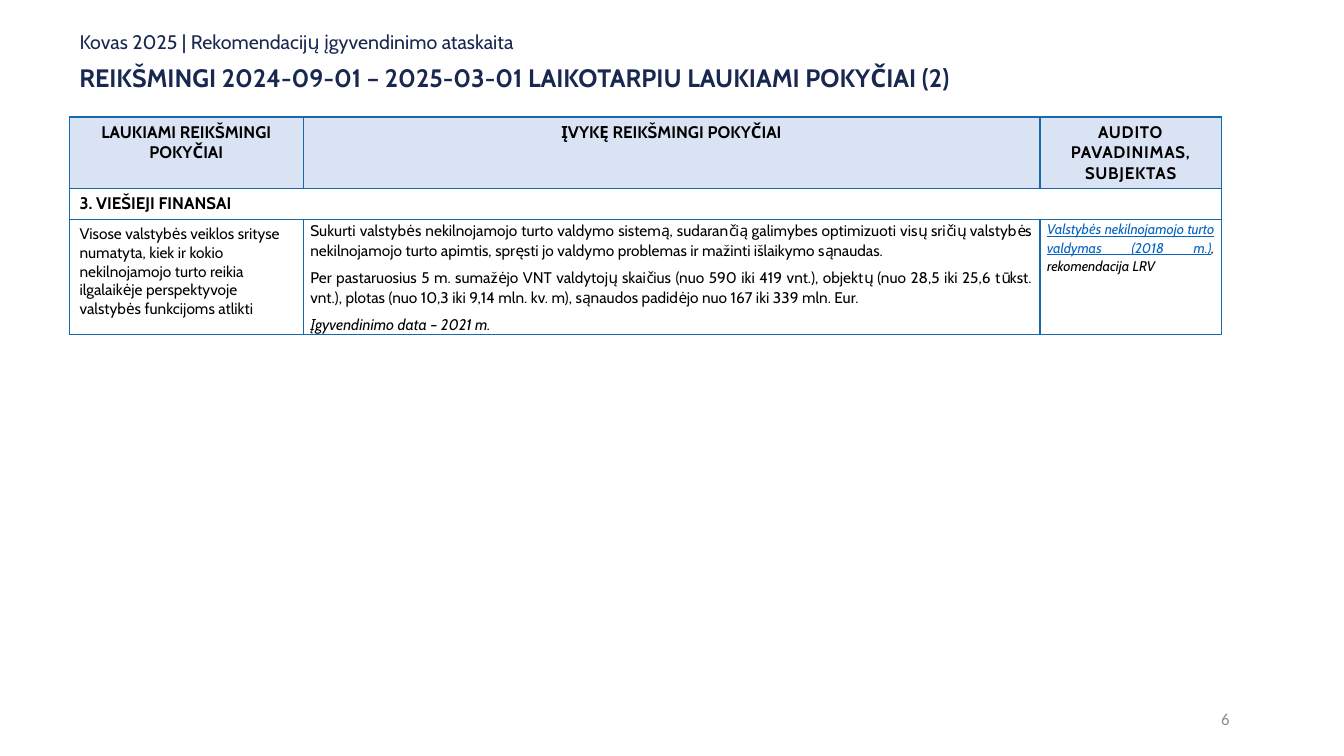
from dataclasses import dataclass, field
from typing import Any, Optional

from lxml.etree import SubElement
from pptx import Presentation
from pptx.dml.color import RGBColor
from pptx.enum.text import MSO_ANCHOR, PP_ALIGN
from pptx.oxml.ns import qn
from pptx.table import _Cell
from pptx.text.text import TextFrame
from pptx.util import Cm, Pt


@dataclass(frozen=True)
class Theme:
    font: str = "Cabin"
    number_font: str = "Calibri"
    navy: str = "192850"
    black: str = "000000"
    grey: str = "8C8C8C"
    link: str = "0563C1"
    border: str = "166AAB"
    header_fill: str = "DAE3F3"
    heading_size: float = 18
    title_size: float = 14
    header_size: float = 12
    body_size: float = 11
    source_size: float = 10
    border_width: float = 1


THEME = Theme()


@dataclass(frozen=True)
class Span:
    text: str
    size: float = THEME.body_size
    color: str = THEME.black
    font: str = THEME.font
    format: dict[str, Any] = field(default_factory=dict)
    tracking: float = 0


@dataclass(frozen=True)
class Para:
    spans: list[Span]
    format: dict[str, Any] = field(default_factory=dict)


@dataclass(frozen=True)
class CellText:
    paras: list[Para]
    fill: Optional[str] = None
    tight: bool = False


BOLD = {"bold": True}
ITALIC = {"italic": True}
CENTERED = {"alignment": PP_ALIGN.CENTER}
JUSTIFIED = {"alignment": PP_ALIGN.JUSTIFY, "line_spacing": 1.1, "space_after": Pt(2)}
JUSTIFIED_NEXT = JUSTIFIED | {"space_before": Pt(2)}


def set_attributes(target: Any, values: dict[str, Any]) -> None:
    for name, value in values.items():
        setattr(target, name, value)


def write(frame: TextFrame, paras: list[Para]) -> None:
    frame.word_wrap = True
    for index, para in enumerate(paras):
        paragraph = frame.add_paragraph() if index else frame.paragraphs[0]
        set_attributes(paragraph, para.format)
        for span in para.spans:
            run = paragraph.add_run()
            run.text = span.text
            base = {"name": span.font, "size": Pt(span.size), "bold": False}
            set_attributes(run.font, base | span.format)
            run.font.color.rgb = RGBColor.from_string(span.color)
            if span.tracking:
                run._r.get_or_add_rPr().set("spc", str(round(span.tracking * 100)))


def draw_borders(cell: _Cell) -> None:
    properties = cell._tc.get_or_add_tcPr()
    for side in ("lnL", "lnR", "lnT", "lnB"):
        line = SubElement(properties, qn(f"a:{side}"), w=str(Pt(THEME.border_width)))
        fill = SubElement(line, qn("a:solidFill"))
        SubElement(fill, qn("a:srgbClr"), val=THEME.border)


def fill_cell(cell: _Cell, content: Optional[CellText]) -> None:
    draw_borders(cell)
    if content and content.fill:
        cell.fill.solid()
        cell.fill.fore_color.rgb = RGBColor.from_string(content.fill)
    else:
        cell.fill.background()
    if content is None:
        return
    if content.tight:
        set_attributes(cell, {"margin_left": Cm(0.18), "margin_right": Cm(0.18),
                              "margin_top": 0, "margin_bottom": 0})
    write(cell.text_frame, content.paras)


def header(text: str, tracking: float = 0) -> CellText:
    span = Span(text, THEME.header_size, format=BOLD, tracking=tracking)
    return CellText([Para([span], CENTERED)], THEME.header_fill)


COLUMN_WIDTHS = (5.89, 18.57, 4.57)
ROW_HEIGHTS = (1.8, 0.78, 2.9)

ROWS: list[list[Optional[CellText]]] = [
    [
        header("LAUKIAMI REIKŠMINGI POKYČIAI"),
        header("ĮVYKĘ REIKŠMINGI POKYČIAI"),
        header("AUDITO PAVADINIMAS, SUBJEKTAS", tracking=0.5),
    ],
    [
        CellText([Para([Span("3. VIEŠIEJI FINANSAI", THEME.header_size, format=BOLD)])]),
        None,
        None,
    ],
    [
        CellText([Para([Span(
            "Visose valstybės veiklos srityse numatyta, kiek ir kokio nekilnojamojo turto "
            "reikia ilgalaikėje perspektyvoje valstybės funkcijoms atlikti")])]),
        CellText([
            Para([Span(
                "Sukurti valstybės nekilnojamojo turto valdymo sistemą, sudarančią galimybes "
                "optimizuoti visų sričių valstybės nekilnojamojo turto apimtis, spręsti jo "
                "valdymo problemas ir mažinti išlaikymo sąnaudas.")], JUSTIFIED),
            Para([Span(
                "Per pastaruosius 5 m. sumažėjo VNT valdytojų skaičius (nuo 590 iki 419 vnt.), "
                "objektų (nuo 28,5 iki 25,6 tūkst. vnt.), plotas (nuo 10,3 iki 9,14 mln. kv. m), "
                "sąnaudos padidėjo nuo 167 iki 339 mln. Eur.")], JUSTIFIED_NEXT),
            Para([Span("Įgyvendinimo data – 2021 m.", format=ITALIC)], JUSTIFIED_NEXT),
        ], tight=True),
        CellText([Para([
            Span("Valstybės nekilnojamojo turto valdymas (2018 m.)", THEME.source_size,
                 THEME.link, format=ITALIC | {"underline": True}),
            Span(", rekomendacija LRV", THEME.source_size, format=ITALIC),
        ], JUSTIFIED)], tight=True),
    ],
]


def add_changes_table(slide: Any) -> None:
    table = slide.shapes.add_table(
        len(ROW_HEIGHTS), len(COLUMN_WIDTHS), Cm(1.75), Cm(2.95),
        Cm(sum(COLUMN_WIDTHS)), Cm(sum(ROW_HEIGHTS))).table
    set_attributes(table, {"first_row": False, "horz_banding": False})
    for column, width in zip(table.columns, COLUMN_WIDTHS):
        column.width = Cm(width)
    for row, height, contents in zip(table.rows, ROW_HEIGHTS, ROWS):
        row.height = Cm(height)
        for cell, content in zip(row.cells, contents):
            fill_cell(cell, content)
    table.cell(1, 0).merge(table.cell(1, len(COLUMN_WIDTHS) - 1))


def main() -> None:
    presentation = Presentation()
    set_attributes(presentation, {"slide_width": Cm(33.87), "slide_height": Cm(19.05)})
    slide = presentation.slides.add_slide(presentation.slide_layouts[5])

    title = slide.shapes.title
    set_attributes(title, {"left": Cm(1.75), "top": Cm(0.69),
                           "width": Cm(29.21), "height": Cm(1.24)})
    title.text_frame.vertical_anchor = MSO_ANCHOR.TOP
    write(title.text_frame, [Para(
        [Span("Kovas 2025 | Rekomendacijų įgyvendinimo ataskaita",
              THEME.title_size, THEME.navy)],
        {"alignment": PP_ALIGN.LEFT, "line_spacing": 0.9})])

    page_number = slide.shapes.add_textbox(Cm(23.95), Cm(17.6), Cm(7.29), Cm(1.02))
    page_number.text_frame.vertical_anchor = MSO_ANCHOR.MIDDLE
    write(page_number.text_frame, [Para(
        [Span("6", THEME.header_size, THEME.grey, THEME.number_font)],
        {"alignment": PP_ALIGN.RIGHT})])

    add_changes_table(slide)

    heading = slide.shapes.add_textbox(Cm(1.75), Cm(1.45), Cm(28.58), Cm(1.02))
    write(heading.text_frame, [Para([Span(
        "REIKŠMINGI 2024-09-01 – 2025-03-01 LAIKOTARPIU LAUKIAMI POKYČIAI (2)",
        THEME.heading_size, THEME.navy, format=BOLD)])])

    presentation.save("out.pptx")


if __name__ == "__main__":
    main()
